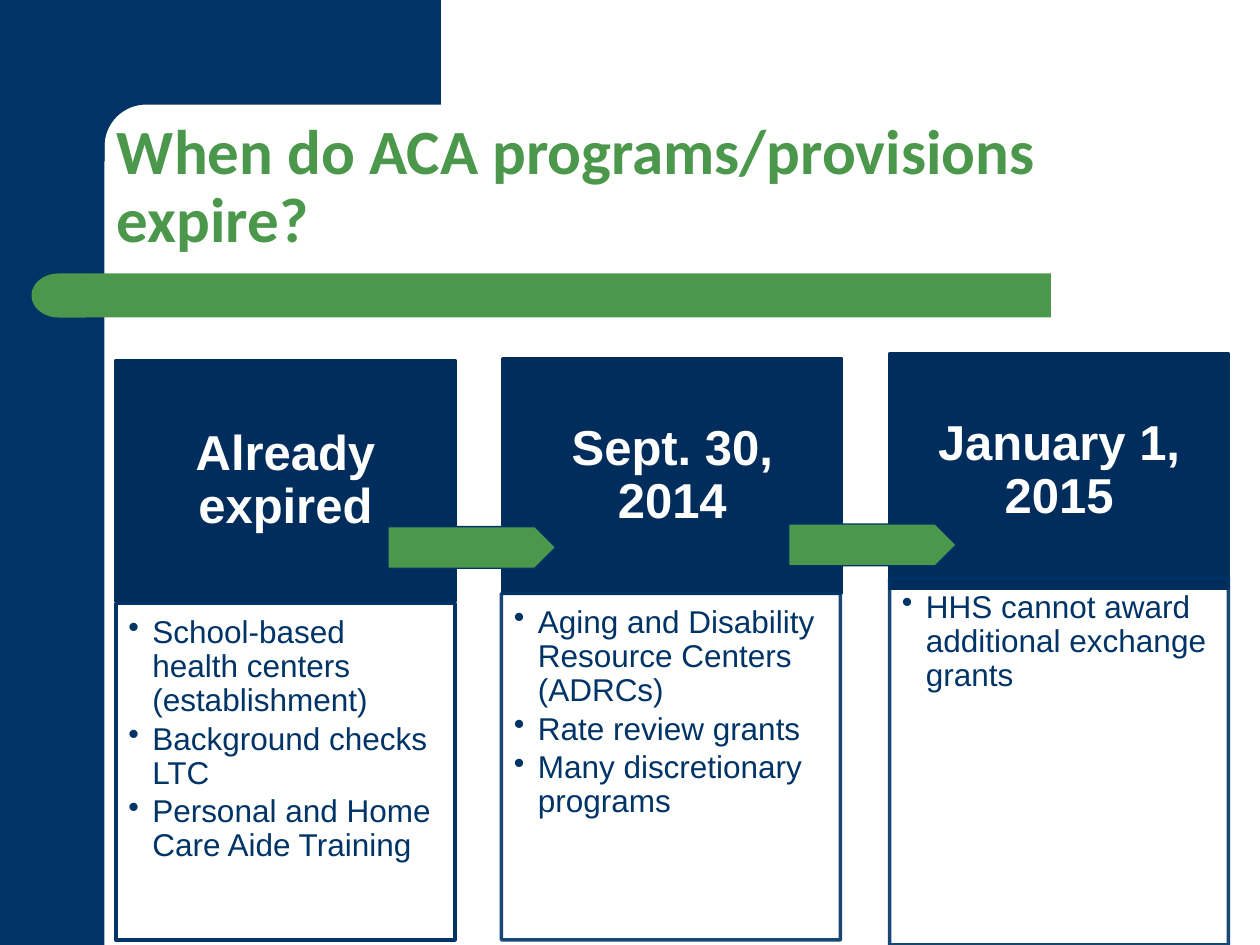
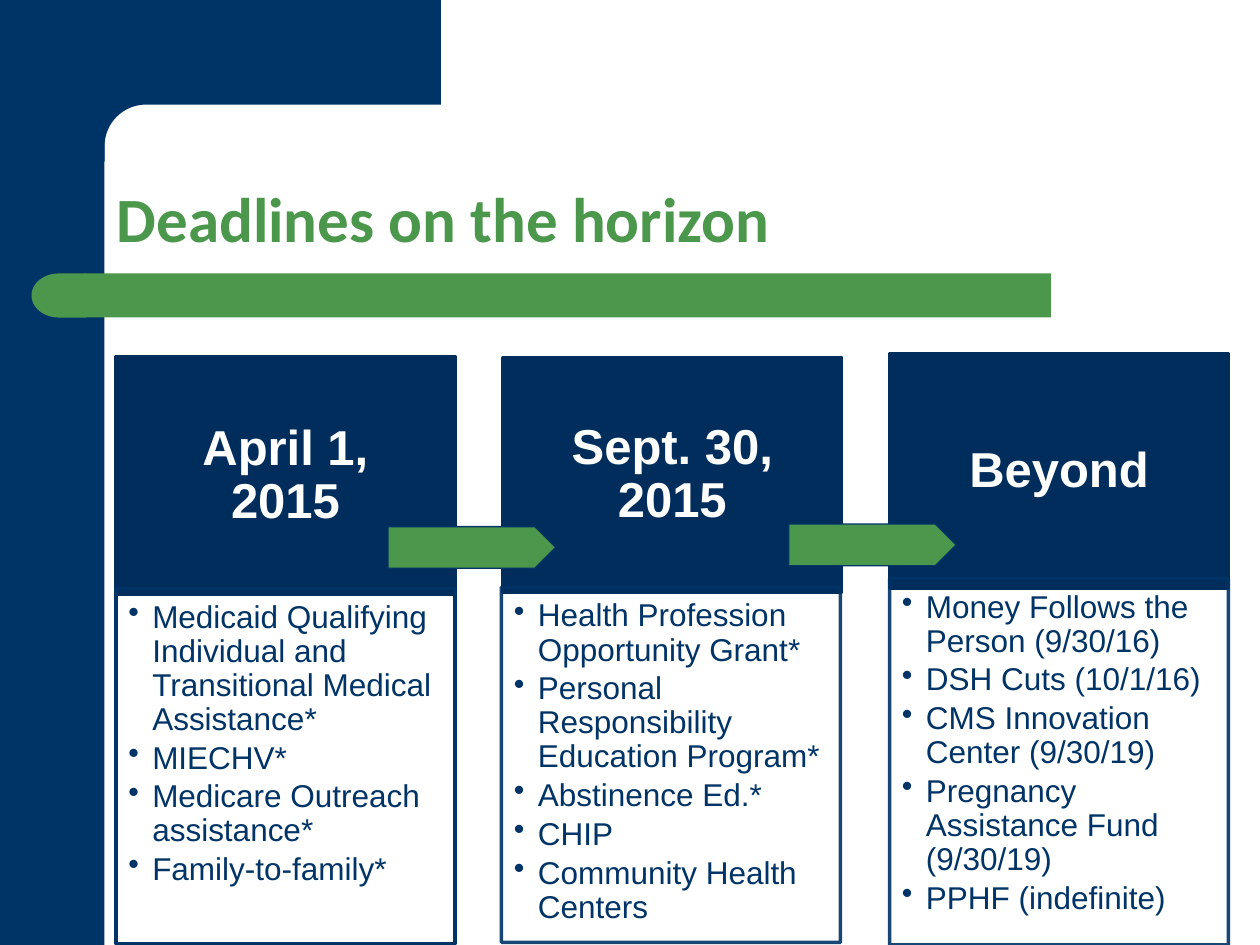
"""Build two slides of programme deadlines, each with three dated columns."""
from dataclasses import dataclass
from math import cos, pi, sin

from lxml import etree
from pptx import Presentation
from pptx.dml.color import RGBColor
from pptx.enum.shapes import MSO_SHAPE
from pptx.enum.text import MSO_ANCHOR, PP_ALIGN
from pptx.oxml.ns import qn
from pptx.util import Inches, Pt

RECT, DELAY, ARROW = MSO_SHAPE.RECTANGLE, MSO_SHAPE.FLOWCHART_DELAY, MSO_SHAPE.PENTAGON
TOP, MIDDLE, BOTTOM = MSO_ANCHOR.TOP, MSO_ANCHOR.MIDDLE, MSO_ANCHOR.BOTTOM
LEFT, CENTER = PP_ALIGN.LEFT, PP_ALIGN.CENTER

SLIDES = [
    {
        "title": "When do ACA programs/provisions expire?",
        "columns": [
            {"head": "Already expired", "top": 2.86, "tall": 1.91, "body": (4.79, 7.46),
             "items": ["School-based health centers (establishment)",
                       "Background checks LTC",
                       "Personal and Home Care Aide Training"]},
            {"head": "Sept. 30, 2014", "top": 2.85, "tall": 1.86, "body": (4.71, 7.46),
             "items": ["Aging and Disability Resource Centers (ADRCs)",
                       "Rate review grants",
                       "Many discretionary programs"]},
            {"head": "January 1, 2015", "top": 2.81, "tall": 1.86, "body": (4.59, 7.5),
             "items": ["HHS cannot award additional exchange grants"]},
        ],
    },
    {
        "title": "Deadlines on the horizon",
        "columns": [
            {"head": "April 1, 2015", "top": 2.83, "tall": 1.89, "body": (4.67, 7.49),
             "items": ["Medicaid Qualifying Individual and Transitional Medical Assistance*",
                       "MIECHV*",
                       "Medicare Outreach assistance*",
                       "Family-to-family*"]},
            {"head": "Sept. 30, 2015", "top": 2.84, "tall": 1.86, "body": (4.66, 7.48),
             "items": ["Health Profession Opportunity Grant*",
                       "Personal Responsibility Education Program*",
                       "Abstinence Ed.*",
                       "CHIP",
                       "Community Health Centers"]},
            {"head": "Beyond", "top": 2.81, "tall": 1.86, "body": (4.59, 7.5),
             "items": ["Money Follows the Person (9/30/16)",
                       "DSH Cuts (10/1/16)",
                       "CMS Innovation Center (9/30/19)",
                       "Pregnancy Assistance Fund (9/30/19)",
                       "PPHF (indefinite)"]},
        ],
    },
]


@dataclass(frozen=True)
class Theme:
    navy: str = "003366"
    deep: str = "002D5C"
    green: str = "4B974B"
    white: str = "FFFFFF"
    title_font: str = "Calibri"
    font: str = "Arial"
    title_size: int = 36
    head_size: int = 28
    item_size: int = 18
    edge: float = 2
    thin: float = 0.75


THEME = Theme()
WIDE = 2.69
STEP = 3.07
START = 0.92
BODY_LEFTS = (0.92, 3.98, 7.06)
ARROWS = ((3.08, 4.18), (6.26, 4.16))
SIDE, CURVE = 0.83, 0.33


def paint(shape, fill=None, line=None, width=0, alpha=None):
    shape.shadow.inherit = False
    if fill:
        shape.fill.solid()
        shape.fill.fore_color.rgb = RGBColor.from_string(fill)
    else:
        shape.fill.background()
    if line:
        shape.line.color.rgb = RGBColor.from_string(line)
        shape.line.width = Pt(width)
        if alpha:
            tint = shape.line._ln.find(".//" + qn("a:srgbClr"))
            etree.SubElement(tint, qn("a:alpha"), val=str(alpha * 1000))
    else:
        shape.line.fill.background()
    return shape


def draw(slide, kind, box, **style):
    return paint(slide.shapes.add_shape(kind, *map(Inches, box)), **style)


def write(shape, lines, size, color, font=THEME.font, bold=False, align=LEFT,
          anchor=TOP, pads=(0.1, 0.05, 0.1, 0.05), after=0, bullet=False):
    frame = shape.text_frame
    frame.word_wrap = True
    frame.vertical_anchor = anchor
    (frame.margin_left, frame.margin_top,
     frame.margin_right, frame.margin_bottom) = map(Inches, pads)
    for i, line in enumerate(lines):
        para = frame.add_paragraph() if i else frame.paragraphs[0]
        para.alignment = align
        para.line_spacing = 0.9
        para.space_after = Pt(after)
        run = para.add_run()
        run.text = line
        run.font.name, run.font.size, run.font.bold = font, Pt(size), bold
        run.font.color.rgb = RGBColor.from_string(color)
        if bullet:
            props = para._p.get_or_add_pPr()
            props.set("marL", str(Inches(0.19)))
            props.set("indent", str(Inches(-0.19)))
            etree.SubElement(props, qn("a:buChar"), char="•")


def add_frame(slide, title):
    draw(slide, RECT, (0, 0, SIDE, 7.5), fill=THEME.navy)
    mid = SIDE + CURVE
    turns = [pi / 2 * i / 16 for i in range(17)]
    arc = [(mid - CURVE * sin(t), mid - CURVE * cos(t)) for t in turns]
    points = [(3.5, 0), (3.5, SIDE), *arc, (SIDE, 1.28), (0.5, 1.28), (0.5, 0)]
    pen = slide.shapes.build_freeform(*map(Inches, points[0]), scale=1.0)
    pen.add_line_segments([(Inches(x), Inches(y)) for x, y in points[1:]], close=True)
    paint(pen.convert_to_shape(), fill=THEME.navy)
    draw(slide, RECT, (0.67, 2.17, 7.67, 0.35), fill=THEME.green)
    draw(slide, DELAY, (0.25, 2.17, 0.43, 0.35), fill=THEME.green).rotation = 180
    box = slide.shapes.add_textbox(*map(Inches, (SIDE, 0.83, 8.67, 1.25)))
    write(box, [title], THEME.title_size, THEME.green, font=THEME.title_font,
          bold=True, anchor=BOTTOM)


def add_column(slide, i, col):
    head = draw(slide, RECT, (START + i * STEP, col["top"], WIDE, col["tall"]),
                fill=THEME.deep, line=THEME.deep, width=THEME.edge)
    write(head, [col["head"]], THEME.head_size, THEME.white, bold=True, align=CENTER,
          anchor=MIDDLE, pads=(0.22, 0.12, 0.22, 0.12), after=9.8)
    top, end = col["body"]
    body = draw(slide, RECT, (BODY_LEFTS[i], top, WIDE, end - top),
                line=THEME.navy, width=THEME.edge, alpha=90 if i else None)
    write(body, col["items"], THEME.item_size, THEME.navy,
          pads=(0.1, 0.1, 0.14, 0.16), after=2.7, bullet=True)


def main():
    deck = Presentation()
    deck.slide_width, deck.slide_height = Inches(10), Inches(7.5)
    for data in SLIDES:
        slide = deck.slides.add_slide(deck.slide_layouts[6])
        add_frame(slide, data["title"])
        for i, col in enumerate(data["columns"]):
            add_column(slide, i, col)
        for x, y in ARROWS:
            draw(slide, ARROW, (x, y, 1.33, 0.33), fill=THEME.green,
                 line=THEME.navy, width=THEME.thin)
    deck.save("out.pptx")


if __name__ == "__main__":
    main()
